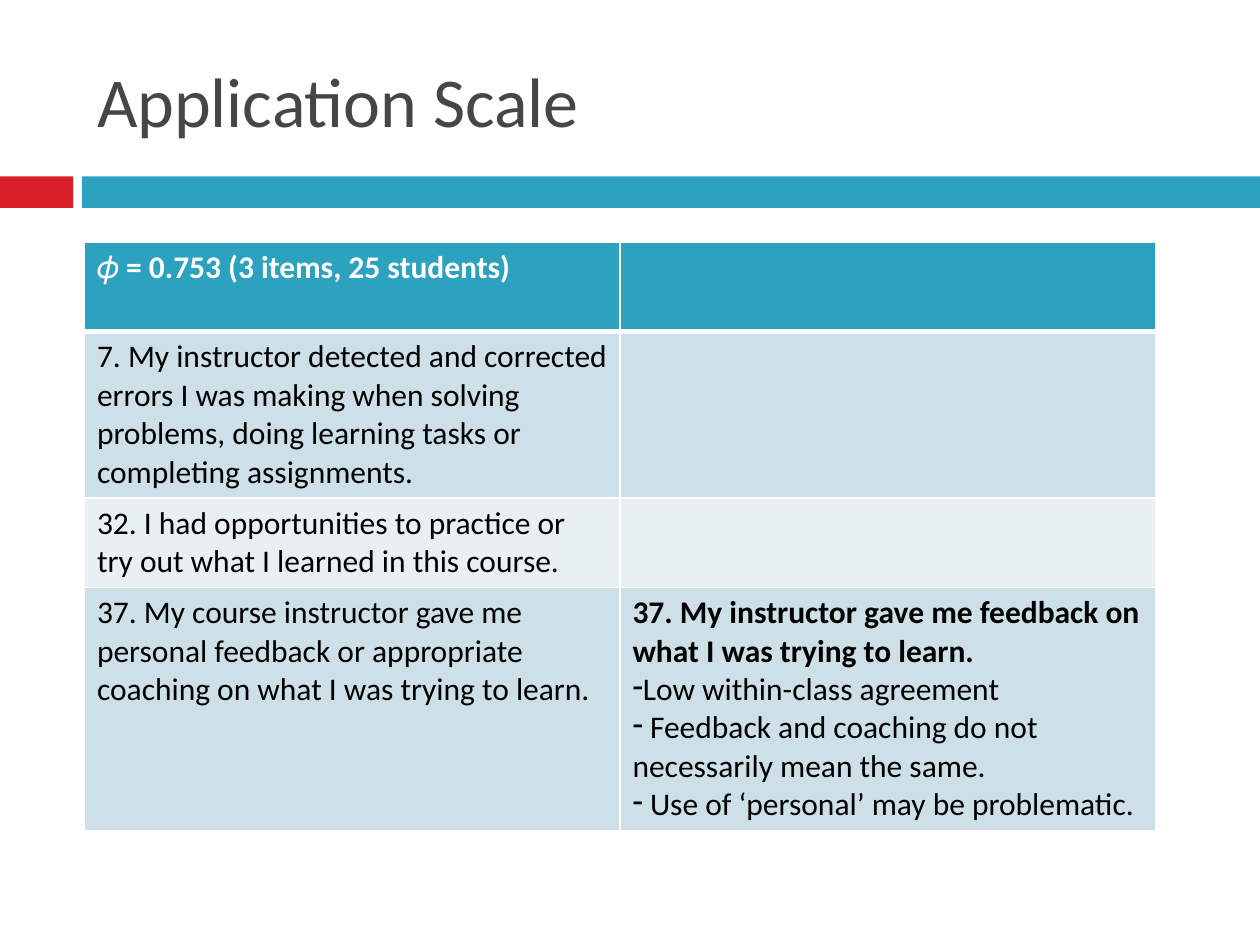
"""Build the Application Scale slide with its table of survey items."""
from lxml import etree
from pptx import Presentation
from pptx.dml.color import RGBColor
from pptx.enum.shapes import MSO_SHAPE
from pptx.enum.text import MSO_ANCHOR, PP_ALIGN
from pptx.oxml import parse_xml
from pptx.oxml.ns import nsdecls, qn
from pptx.util import Inches, Pt

RECTANGLE = MSO_SHAPE.RECTANGLE
MIDDLE = MSO_ANCHOR.MIDDLE
LEFT = PP_ALIGN.LEFT
TITLE_ONLY = 5

RED, TEAL = "DA1F28", "2DA2BF"
BANDS = ("E8F0F4", "CDE0E8")
ROW_HEIGHTS = (0.71, 1.32, 0.71, 1.93)
COLUMN_WIDTH = 4.25
ROWS = [
    (["𝜙 = 0.753 (3 items, 25 students)"], []),
    (["7. My instructor detected and corrected errors I was making when solving "
      "problems, doing learning tasks or completing assignments."], []),
    (["32. I had opportunities to practice or try out what I learned in this course."], []),
    (["37. My course instructor gave me personal feedback or appropriate coaching "
      "on what I was trying to learn."],
     ["37. My instructor gave me feedback on what I was trying to learn.",
      "Low within-class agreement",
      " Feedback and coaching do not necessarily mean the same.",
      " Use of ‘personal’ may be problematic."]),
]


def color(value):
    """Turn a hex string into a colour."""
    return RGBColor.from_string(value)


class SlideBuilder:
    """Hold the style and the current slide."""

    font_name = "Calibri"

    def __init__(self, page):
        """Keep the slide to draw on."""
        self.page = page

    def style(self, para, size, ink, bold=False):
        """Set the font of a paragraph."""
        font = para.font
        font.name, font.size, font.bold = self.font_name, Pt(size), bold
        font.color.rgb = color(ink)

    def title(self, text, left, top, width, height):
        """Fill and place the title placeholder."""
        box = self.page.shapes.title
        box.left, box.top = Inches(left), Inches(top)
        box.width, box.height = Inches(width), Inches(height)
        frame = box.text_frame
        frame.text = text
        frame.vertical_anchor = MIDDLE
        para = frame.paragraphs[0]
        para.alignment = LEFT
        self.style(para, 40, "464646")

    def bar(self, left, top, width, height, fill):
        """Draw a plain filled rectangle."""
        shape = self.page.shapes.add_shape(
            RECTANGLE, Inches(left), Inches(top), Inches(width), Inches(height))
        shape.shadow.inherit = False
        shape.fill.solid()
        shape.fill.fore_color.rgb = color(fill)
        shape.line.fill.background()

    def borders(self, cell, top, bottom):
        """Give a cell white borders with the given top and bottom widths."""
        properties = cell._tc.get_or_add_tcPr()
        for side, width in (("L", 1), ("R", 1), ("T", top), ("B", bottom)):
            properties.append(parse_xml(
                f'<a:ln{side} {nsdecls("a")} w="{Pt(width)}"><a:solidFill>'
                f'<a:srgbClr val="FFFFFF"/></a:solidFill></a:ln{side}>'))

    def bullet(self, para):
        """Mark a paragraph with a dash bullet and no indent."""
        properties = para._p.get_or_add_pPr()
        properties.set("marL", "0")
        properties.set("indent", "0")
        dash = etree.Element(qn("a:buChar"), char="-")
        properties.insert(0, dash)

    def cell(self, cell, lines, row):
        """Fill one cell; a list's first line is a bold heading."""
        header = row == 0
        self.borders(cell, 3 if row == 1 else 1, 3 if header else 1)
        cell.fill.solid()
        cell.fill.fore_color.rgb = color(TEAL if header else BANDS[row % 2])
        frame = cell.text_frame
        frame.text = "\n".join(lines)
        for index, para in enumerate(frame.paragraphs):
            heading = index == 0 and len(lines) > 1
            self.style(para, 18, "FFFFFF" if header else "000000", header or heading)
            if index:
                self.bullet(para)

    def table(self, rows, left, top):
        """Add the table and fill its cells."""
        columns = len(rows[0])
        table = self.page.shapes.add_table(
            len(rows), columns, Inches(left), Inches(top),
            Inches(COLUMN_WIDTH * columns), Inches(sum(ROW_HEIGHTS))).table
        for row, cells in enumerate(rows):
            table.rows[row].height = Inches(ROW_HEIGHTS[row])
            for column, lines in enumerate(cells):
                self.cell(table.cell(row, column), lines, row)


def main():
    """Build and save the deck."""
    deck = Presentation()
    deck.slide_width, deck.slide_height = Inches(10), Inches(7.5)
    builder = SlideBuilder(deck.slides.add_slide(deck.slide_layouts[TITLE_ONLY]))
    builder.bar(0, 1.4, 0.58, 0.25, RED)
    builder.bar(0.65, 1.4, 9.35, 0.25, TEAL)
    builder.title("Application Scale", 0.67, 0.25, 8.92, 1.08)
    builder.table(ROWS, 0.67, 1.92)
    deck.save("out.pptx")


if __name__ == "__main__":
    main()
